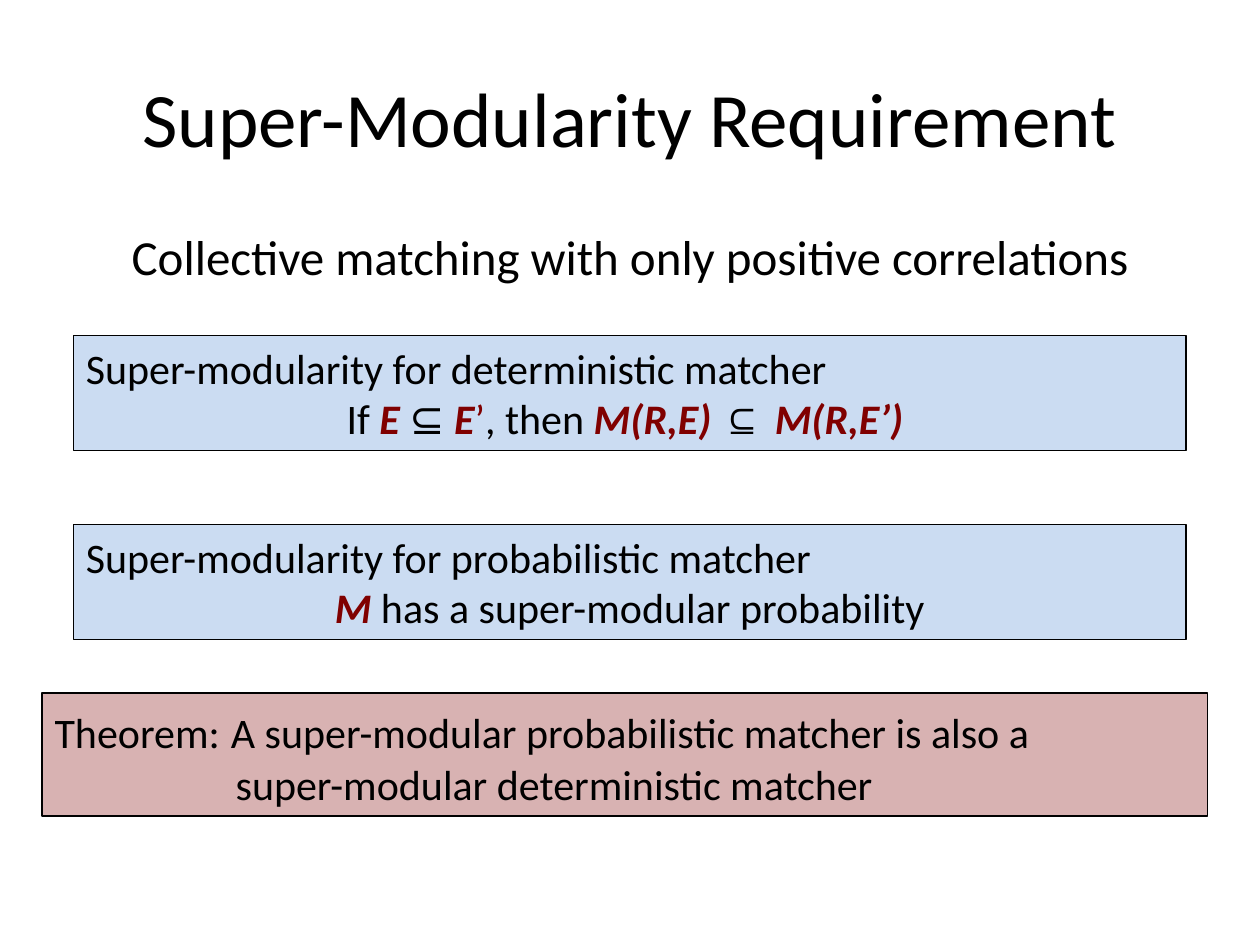
import pptx
import pptx.dml.color
import pptx.enum.shapes
import pptx.enum.text
import pptx.util
from lxml import etree
from pptx.util import Cm, Pt

BLACK, MAROON, BLUE = "000000", "800000", "558ED5"
CENTER = pptx.enum.text.PP_ALIGN.CENTER
LEFT = pptx.enum.text.PP_ALIGN.LEFT


def color(hex_string):
    return pptx.dml.color.RGBColor.from_string(hex_string)


def add_runs(paragraph, runs, alignment, size=24):
    """Fill a paragraph with (text, style) runs; "math" is bold italic maroon."""
    paragraph.alignment = alignment
    for text, style in runs:
        run = paragraph.add_run()
        run.text = text
        run.font.name = "Arial" if style == "symbol" else "Calibri"
        run.font.size = Pt(28 if style == "wide" else size)
        run.font.bold = run.font.italic = style == "math"
        run.font.color.rgb = color(MAROON if style in ("math", "prime") else BLACK)


presentation = pptx.Presentation()
presentation.slide_width, presentation.slide_height = Cm(25.4), Cm(19.05)
slide = presentation.slides.add_slide(presentation.slide_layouts[5])

title = slide.shapes.title
title.left, title.top, title.width, title.height = Cm(1.27), Cm(0.76), Cm(22.86), Cm(3.18)
title.text_frame.vertical_anchor = pptx.enum.text.MSO_ANCHOR.MIDDLE
add_runs(title.text_frame.paragraphs[0], [("Super-Modularity Requirement", "")], CENTER, 44)

subtitle = slide.shapes.add_textbox(Cm(1.27), Cm(4.45), Cm(22.86), Cm(1.9))
subtitle.text_frame.word_wrap = True
paragraph = subtitle.text_frame.paragraphs[0]
paragraph.space_before = Pt(5.6)
add_runs(paragraph, [("Collective matching with only positive correlations", "")], CENTER, 28)

deterministic = [
    ("If ", ""), ("E ", "math"), ("⊆ ", ""), ("E", "math"), ("’", "prime"),
    (", then ", ""), ("M(R,E) ", "math"), ("⊆ ", "symbol"), ("M(R,E’) ", "math"),
]
probabilistic = [("M", "math"), (" has a super-modular probability", "")]
theorem = [("Theorem:", ""), (" ", "wide"),
           ("A super-modular probabilistic matcher is also a", "")]

# left, top, width, height in cm; fill; first line; second line, its alignment and indent
boxes = [
    (1.48, 6.77, 22.43, 2.31, BLUE,
     [("Super-modularity for deterministic matcher", "")], deterministic, CENTER, 0),
    (1.48, 10.58, 22.43, 2.31, BLUE,
     [("Super-modularity for probabilistic matcher", "")], probabilistic, CENTER, 0),
    (0.85, 13.97, 23.5, 2.48, MAROON,
     theorem, [("super-modular deterministic matcher", "")], LEFT, 3.65),
]
for left, top, width, height, fill, first_line, second_line, alignment, indent in boxes:
    box = slide.shapes.add_shape(pptx.enum.shapes.MSO_SHAPE.RECTANGLE,
                                 Cm(left), Cm(top), Cm(width), Cm(height))
    box.shadow.inherit = False
    box.line.color.rgb = color(BLACK)
    box.line.width = Pt(0.75)
    box.fill.solid()
    box.fill.fore_color.rgb = color(fill)
    fill_color = box.fill._xPr.find(".//" + pptx.oxml.ns.qn("a:srgbClr"))
    etree.SubElement(fill_color, pptx.oxml.ns.qn("a:alpha"), val="30000")

    text_frame = box.text_frame
    text_frame.word_wrap = True
    text_frame.vertical_anchor = pptx.enum.text.MSO_ANCHOR.TOP
    add_runs(text_frame.paragraphs[0], first_line, LEFT)
    paragraph = text_frame.add_paragraph()
    add_runs(paragraph, second_line, alignment)
    if indent:
        paragraph._p.get_or_add_pPr().set("marL", str(Cm(indent)))

presentation.save("out.pptx")
